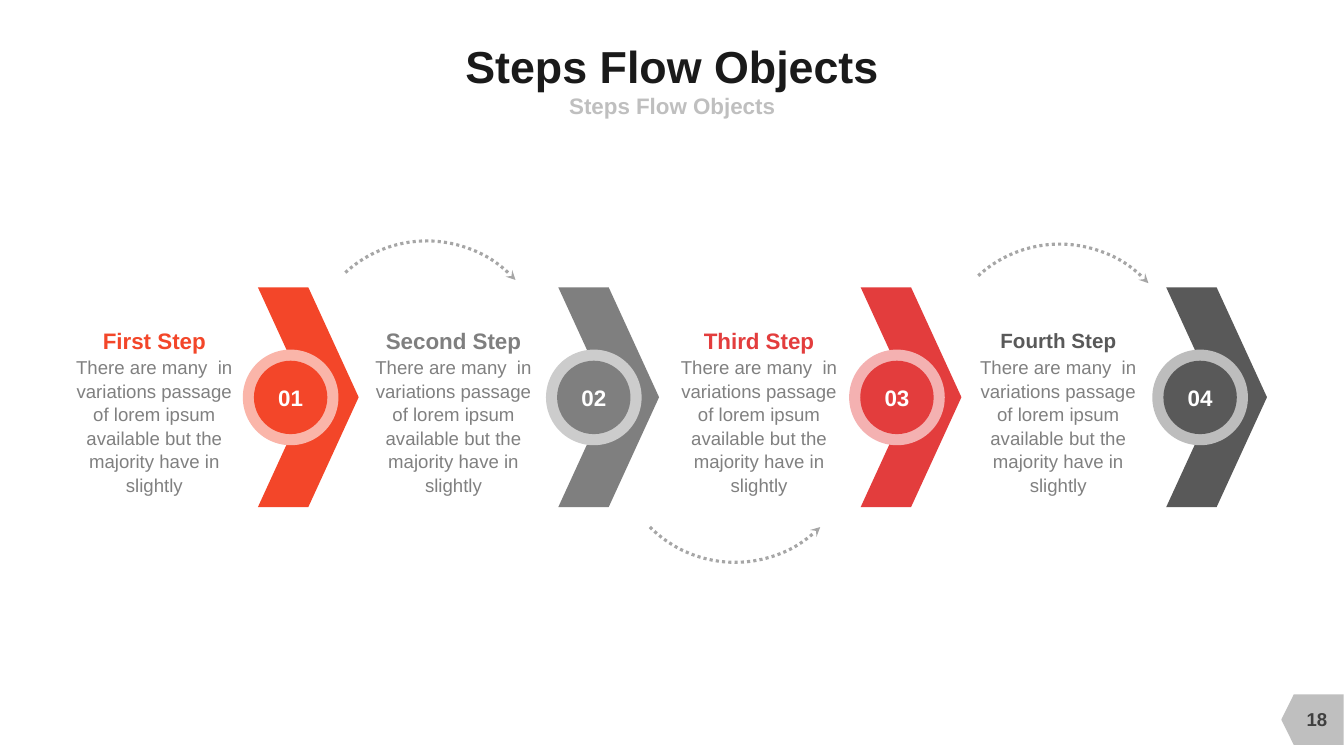
from lxml.etree import SubElement
from pptx import Presentation
from pptx.dml.color import RGBColor
from pptx.enum.dml import MSO_LINE
from pptx.enum.shapes import MSO_SHAPE
from pptx.enum.text import MSO_ANCHOR, PP_ALIGN
from pptx.oxml.ns import qn
from pptx.util import Cm, Pt

COLORS = {
    "heading": "1A1A1A", "subheading": "BFBFBF", "body": "808080",
    "first": "F34629", "first_ring": "FAB5A9",
    "second": "7F7F7F", "second_ring": "CCCCCC",
    "third": "E33D3D", "third_ring": "F4B1B1",
    "fourth": "595959", "fourth_ring": "BDBDBD",
    "arrow": "A6A6A6", "tab": "BFBFBF", "page": "404040", "badge": "FFFFFF",
}
FRAME_FORMAT = {"margin_left": 0, "margin_right": 0, "margin_top": 0, "margin_bottom": 0}
STEP_TEXT = ("There are many  in variations passage of lorem ipsum "
             "available but the majority have in slightly")
STEPS = [
    ("first", "First Step", 16, 3.89, 6.5),
    ("second", "Second Step", 16, 11.43, 14.07),
    ("third", "Third Step", 16, 19.13, 21.69),
    ("fourth", "Fourth Step", 14.7, 26.67, 29.39),
]
ARROWS = [(7.72, 6.07, 317.5, False), (15.49, 8.1, 225, True), (23.67, 6.15, 317.5, False)]
BADGE_LEFT, BADGE_PITCH = 6.12, 7.64


def color(key):
    """Return the palette colour for a key."""
    return RGBColor.from_string(COLORS[key])


def write(shape, words, size, tint, bold=True, wrap=True, anchor=MSO_ANCHOR.MIDDLE, spacing=None):
    """Put one centred paragraph into a shape."""
    frame = shape.text_frame
    for name, value in (FRAME_FORMAT | {"word_wrap": wrap, "vertical_anchor": anchor}).items():
        setattr(frame, name, value)
    paragraph = frame.paragraphs[0]
    paragraph.alignment = PP_ALIGN.CENTER
    paragraph.line_spacing = spacing
    run = paragraph.add_run()
    run.text = words
    for name, value in {"name": "Arial", "size": Pt(size), "bold": bold}.items():
        setattr(run.font, name, value)
    run.font.color.rgb = color(tint)


def add_label(slide, box, words, size, tint, **options):
    """Add a text box in the given box."""
    write(slide.shapes.add_textbox(*map(Cm, box)), words, size, tint, **options)


def add_solid(slide, kind, box, tint):
    """Add a filled shape without outline or shadow."""
    solid = slide.shapes.add_shape(kind, *map(Cm, box))
    solid.shadow.inherit = False
    solid.fill.solid()
    solid.fill.fore_color.rgb = color(tint)
    solid.line.fill.background()
    return solid


def add_header(slide, left, top, width):
    """Add the heading and the line below it."""
    add_label(slide, (left, top, width, 1.32), "Steps Flow Objects", 32, "heading", wrap=False)
    add_label(slide, (left, top + 1.3, width, 0.74), "Steps Flow Objects", 16, "subheading")


def add_step_text(slide, center, top, key, title, size):
    """Add a step's title and description around a centre line."""
    width = 4.2
    left = center - width / 2
    add_label(slide, (left, top, width, 0.69), title, size, key, wrap=False)
    add_label(slide, (left, top + 0.72, width, 3.43), STEP_TEXT, 13.3, "body",
              bold=False, anchor=MSO_ANCHOR.TOP, spacing=1.05)


def add_badge(slide, left, top, key, number):
    """Add a numbered disc with its pale ring."""
    ring, inset = 2.41, 0.28
    disc = ring - 2 * inset
    add_solid(slide, MSO_SHAPE.OVAL, (left, top, ring, ring), f"{key}_ring")
    badge = add_solid(slide, MSO_SHAPE.OVAL, (left + inset, top + inset, disc, disc), key)
    write(badge, f"{number:02}", 16, "badge", wrap=False)


def add_arrow(slide, left, top, rotation, flipped):
    """Add a dotted arc that ends in an arrowhead."""
    arrow = slide.shapes.add_shape(MSO_SHAPE.ARC, *map(Cm, (left, top, 6.07, 6.07)))
    arrow.shadow.inherit = False
    arrow.rotation = rotation
    arrow.fill.background()
    arrow.line.color.rgb = color("arrow")
    for name, value in {"width": Pt(2.25), "dash_style": MSO_LINE.ROUND_DOT}.items():
        setattr(arrow.line, name, value)
    properties = arrow._element.spPr
    SubElement(properties.find(qn("a:ln")), qn("a:tailEnd"), type="stealth")
    if flipped:
        properties.find(qn("a:xfrm")).set("flipH", "1")


def add_page_tab(slide, left, top):
    """Add the page number on its tab."""
    tab = add_solid(slide, MSO_SHAPE.FLOWCHART_OFFPAGE_CONNECTOR, (left, top, 1.27, 1.57), "tab")
    tab.rotation = 90
    add_label(slide, (left - 0.1, top + 0.25, 1.7, 1.02), "18", 13.3, "page")


def main():
    """Build the slide and save it."""
    deck = Presentation()
    for name, value in {"slide_width": Cm(33.87), "slide_height": Cm(19.05)}.items():
        setattr(deck, name, value)
    slide = deck.slides.add_slide(deck.slide_layouts[6])
    add_page_tab(slide, 32.44, 17.35)
    add_header(slide, 6.5, 0.99, 20.88)
    for index, (key, title, size, center, chevron_left) in enumerate(STEPS):
        add_step_text(slide, center, 8.23, key, title, size)
        add_solid(slide, MSO_SHAPE.CHEVRON, (chevron_left, 7.24, 2.54, 5.54), key)
        add_badge(slide, BADGE_LEFT + index * BADGE_PITCH, 8.81, key, index + 1)
    for arrow in ARROWS:
        add_arrow(slide, *arrow)
    deck.save("out.pptx")


if __name__ == "__main__":
    main()
